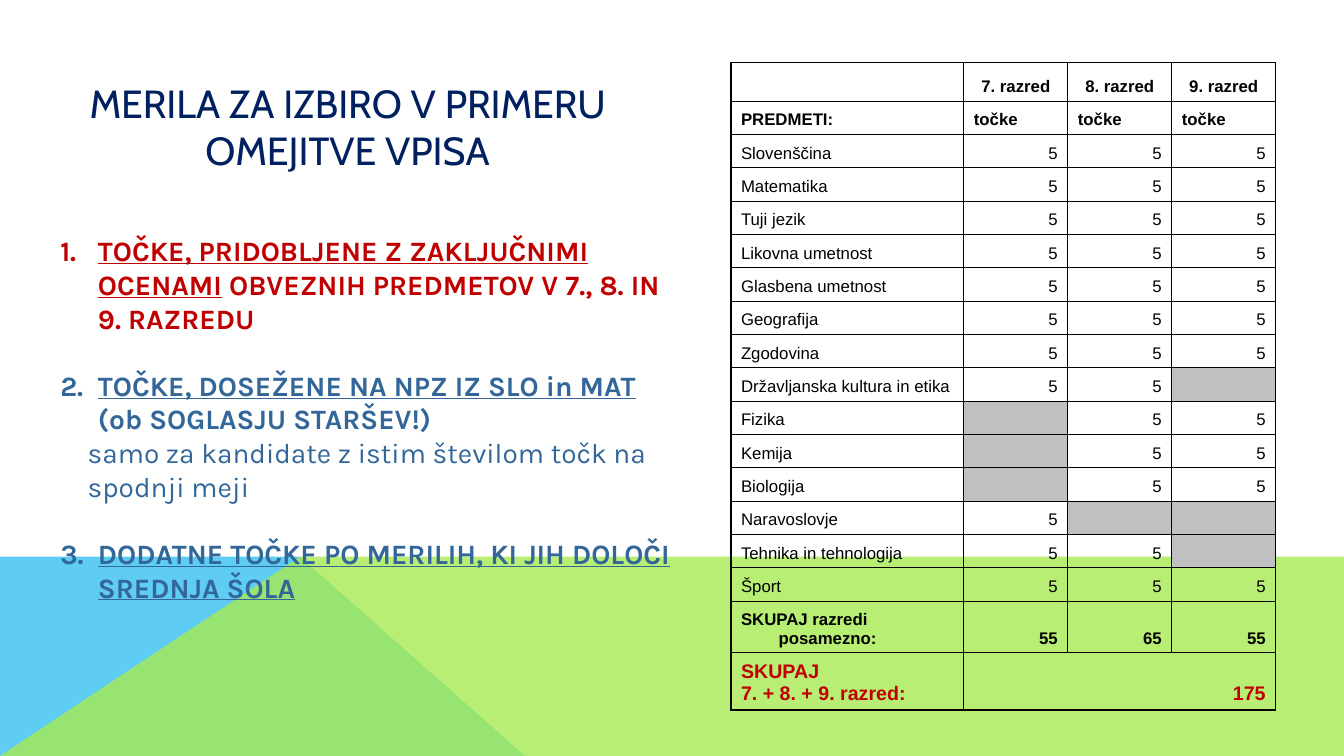
import dataclasses
import typing

import lxml.etree
import pptx
import pptx.dml.color
import pptx.enum.text
import pptx.oxml.ns
import pptx.slide
import pptx.util

Cm = pptx.util.Cm
Pt = pptx.util.Pt
ALIGN = pptx.enum.text.PP_ALIGN
ANCHOR = pptx.enum.text.MSO_ANCHOR


@dataclasses.dataclass(frozen=True)
class Theme:
    sky: str = "5ECCF3"
    lime: str = "A7EA52"
    navy: str = "002060"
    red: str = "C00000"
    steel: str = "336699"
    black: str = "000000"
    gray: str = "C0C0C0"
    title: float = 28
    body: float = 20
    cell: float = 12
    total: float = 14


THEME = Theme()
HANG = 0.95


class Piece(typing.NamedTuple):
    text: str
    font: str
    size: float
    color: str
    bold: bool = False
    under: bool = False


@dataclasses.dataclass
class Item:
    words: list[Piece]
    num: int = 0
    gap: float = 0


@dataclasses.dataclass
class Row:
    label: list[str]
    marks: list[str]
    high: float = 0.84
    size: float = THEME.cell
    color: str = THEME.black
    bold: bool = False
    align: ALIGN = ALIGN.RIGHT


def add_xml(node, tag: str, **attrs: str):
    return lxml.etree.SubElement(node, pptx.oxml.ns.qn(tag), attrs)


def add_piece(para, piece: Piece) -> None:
    run = para.add_run()
    run.text = piece.text
    font = run.font
    font.name, font.size = piece.font, Pt(piece.size)
    font.bold, font.underline = piece.bold, piece.under
    font.color.rgb = pptx.dml.color.RGBColor.from_string(piece.color)


def set_hang(para, left: float, first: float) -> None:
    props = para._p.get_or_add_pPr()
    props.set("marL", str(Cm(left)))
    props.set("indent", str(Cm(first)))


def add_field(slide: pptx.slide.Slide, left: float, top: float, wide: float, high: float):
    frame = slide.shapes.add_textbox(Cm(left), Cm(top), Cm(wide), Cm(high)).text_frame
    frame.word_wrap = True
    return frame


def add_lines(frame, count: int) -> list:
    return [frame.paragraphs[0]] + [frame.add_paragraph() for _ in range(count - 1)]


def draw_hill(slide: pptx.slide.Slide, spots: list, color: str, alpha: int = 100) -> None:
    points = [(Cm(x), Cm(y)) for x, y in spots]
    form = slide.shapes.build_freeform(*points[0], scale=1.0)
    form.add_line_segments(points[1:], close=True)
    hill = form.convert_to_shape()
    hill.shadow.inherit = False
    hill.line.fill.background()
    hill.fill.solid()
    hill.fill.fore_color.rgb = pptx.dml.color.RGBColor.from_string(color)
    if alpha < 100:
        tint = hill._element.spPr.find(".//" + pptx.oxml.ns.qn("a:srgbClr"))
        add_xml(tint, "a:alpha", val=str(alpha * 1000))


def draw_title(slide: pptx.slide.Slide, lines: list[str]) -> None:
    frame = add_field(slide, 0.2, 1.19, 17.12, 3.99)
    frame.vertical_anchor = ANCHOR.MIDDLE
    for para, line in zip(add_lines(frame, len(lines)), lines):
        para.alignment = ALIGN.CENTER
        add_piece(para, Piece(line, "Cabin", THEME.title, THEME.navy))


def draw_list(slide: pptx.slide.Slide, items: list[Item]) -> None:
    frame = add_field(slide, 1.27, 5.77, 16.15, 9.65)
    for para, item in zip(add_lines(frame, len(items)), items):
        para.space_before = Pt(item.gap)
        if item.num:
            set_hang(para, HANG, -HANG)
            add_xml(para._p.get_or_add_pPr(), "a:buFont", typeface="+mj-lt")
            add_xml(para._p.get_or_add_pPr(), "a:buAutoNum",
                    type="arabicPeriod", startAt=str(item.num))
        else:
            set_hang(para, 0.69, 0)
        for piece in item.words:
            add_piece(para, piece)


def fill_cell(cell, lines: list[str], row: Row, align: ALIGN) -> None:
    cell.vertical_anchor = ANCHOR.BOTTOM
    for para, line in zip(add_lines(cell.text_frame, len(lines)), lines):
        para.alignment = align
        set_hang(para, HANG, -HANG)
        if line:
            add_piece(para, Piece(line, "Arial", row.size, row.color, row.bold))
        else:
            add_xml(para._p, "a:endParaRPr", sz=str(int(row.size * 100)))


def frame_cell(cell, shaded: bool) -> None:
    props = cell._tc.get_or_add_tcPr()
    for side in ("a:lnL", "a:lnR", "a:lnT", "a:lnB"):
        edge = add_xml(props, side, w=str(Pt(1)))
        add_xml(add_xml(edge, "a:solidFill"), "a:srgbClr", val=THEME.black)
    if shaded:
        cell.fill.solid()
        cell.fill.fore_color.rgb = pptx.dml.color.RGBColor.from_string(THEME.gray)
    else:
        cell.fill.background()


def draw_grid(slide: pptx.slide.Slide, rows: list[Row]) -> None:
    wides = [5.87, 2.62, 2.62, 2.62]
    high = sum(row.high for row in rows)
    grid = slide.shapes.add_table(len(rows), len(wides), Cm(18.42), Cm(1.58),
                                  Cm(sum(wides)), Cm(high)).table
    grid.first_row = grid.horz_banding = False
    for col, wide in zip(grid.columns, wides):
        col.width = Cm(wide)
    last = len(rows) - 1
    grid.cell(last, 1).merge(grid.cell(last, 3))
    for r, row in enumerate(rows):
        grid.rows[r].height = Cm(row.high)
        fill_cell(grid.cell(r, 0), row.label, row, ALIGN.LEFT)
        for c, mark in enumerate(row.marks, 1):
            fill_cell(grid.cell(r, c), [mark], row, row.align)
        for c in range(len(wides)):
            shaded = 0 < c <= len(row.marks) and not row.marks[c - 1]
            frame_cell(grid.cell(r, c), shaded)


def main() -> None:
    deck = pptx.Presentation()
    deck.slide_width, deck.slide_height = Cm(33.87), Cm(19.05)
    slide = deck.slides.add_slide(deck.slide_layouts[6])

    # Coloured hills at the foot
    draw_hill(slide, [(0, 19.05), (0, 14.03), (7.56, 14.03), (13.23, 19.05)], THEME.sky)
    draw_hill(slide, [(0, 19.05), (7.56, 14.03), (33.87, 14.03), (33.87, 19.05)],
              THEME.lime, 80)

    # Numbered criteria
    red = Piece("", "Karla", THEME.body, THEME.red, True)
    blue = red._replace(color=THEME.steel)
    plain = blue._replace(bold=False)
    draw_list(slide, [
        Item([red._replace(text="TOČKE, PRIDOBLJENE Z ZAKLJUČNIMI OCENAMI", under=True),
              red._replace(text=" OBVEZNIH PREDMETOV V 7., 8. IN 9. RAZREDU")], 1),
        Item([blue._replace(text="TOČKE, DOSEŽENE NA NPZ IZ SLO in MAT ", under=True),
              blue._replace(text="(ob SOGLASJU STARŠEV!)")], 2, 24),
        Item([plain._replace(text="samo za kandidate z istim številom točk na")]),
        Item([plain._replace(text="spodnji meji")]),
        Item([blue._replace(text="DODATNE TOČKE PO MERILIH, KI JIH DOLOČI SREDNJA ŠOLA",
                            under=True)], 3, 24),
    ])

    # Points by subject; a gray cell means the subject is not taught that year
    years = {"Slovenščina": "789", "Matematika": "789", "Tuji jezik": "789",
             "Likovna umetnost": "789", "Glasbena umetnost": "789",
             "Geografija": "789", "Zgodovina": "789",
             "Državljanska kultura in etika": "78", "Fizika": "89", "Kemija": "89",
             "Biologija": "89", "Naravoslovje": "7",
             "Tehnika in tehnologija": "78", "Šport": "789"}
    draw_grid(slide, [
        Row([""], [f"{year}. razred" for year in "789"], 0.97, bold=True, align=ALIGN.CENTER),
        Row(["PREDMETI:"], ["točke"] * 3, bold=True, align=ALIGN.LEFT),
        *(Row([name], ["5" if year in taught else "" for year in "789"])
          for name, taught in years.items()),
        Row(["SKUPAJ razredi posamezno:"], ["55", "65", "55"], 1.3, bold=True),
        Row(["SKUPAJ", "7. + 8. + 9. razred:"], ["175"], 1.43, THEME.total, THEME.red, True),
    ])

    # Title
    draw_title(slide, ["MERILA ZA IZBIRO V PRIMERU", "OMEJITVE VPISA"])
    deck.save("out.pptx")


if __name__ == "__main__":
    main()
